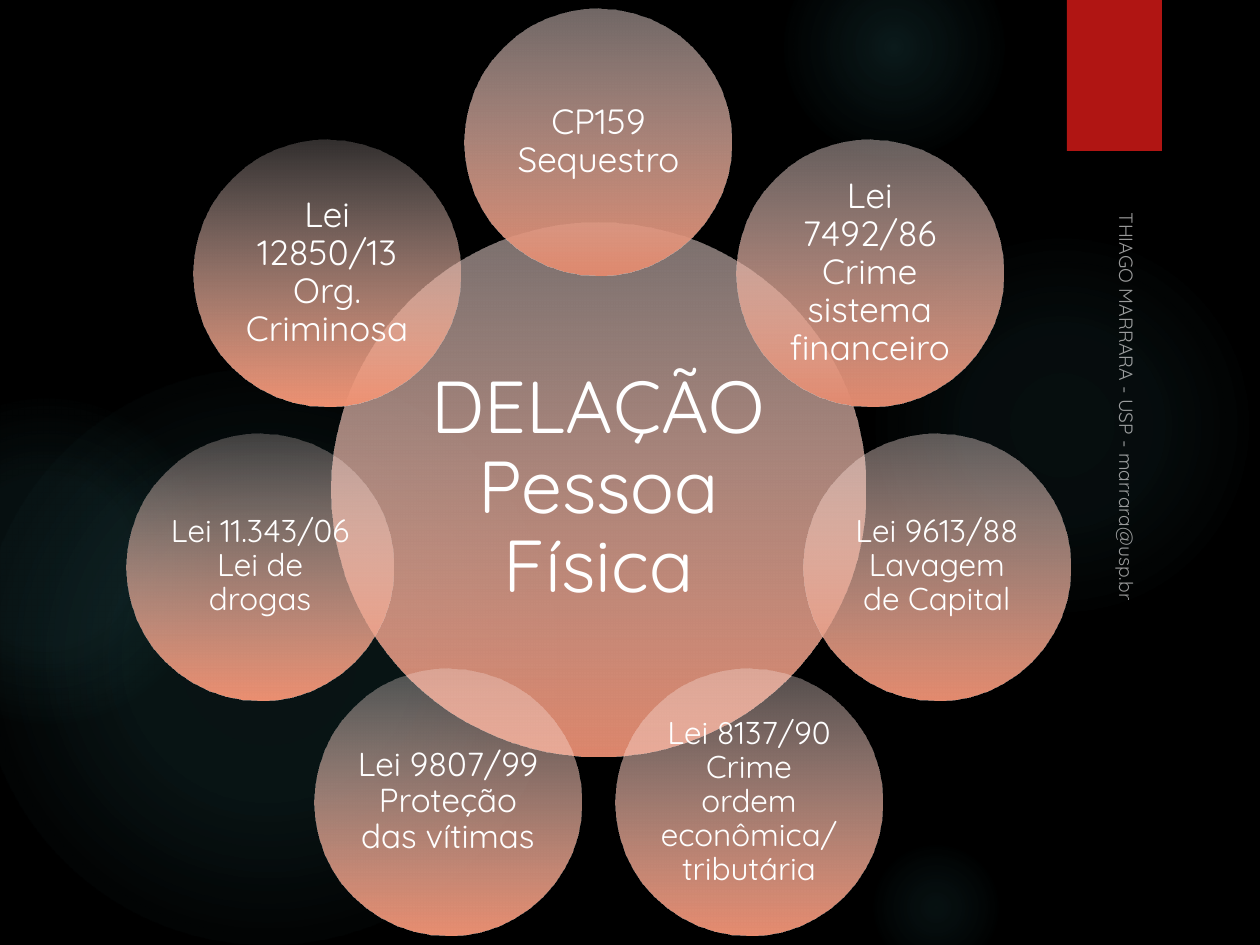
from math import cos, radians, sin

from pptx import Presentation
from pptx.dml.color import RGBColor
from pptx.enum.shapes import MSO_SHAPE as SHAPE
from pptx.enum.text import MSO_ANCHOR as ANCHOR, PP_ALIGN as ALIGN
from pptx.oxml import parse_xml
from pptx.oxml.ns import nsdecls, qn
from pptx.util import Pt

PX = 914400 / 126
FONT = "Quicksand"
BLACK = RGBColor(0x00, 0x00, 0x00)
WHITE = RGBColor(0xFF, 0xFF, 0xFF)
RED = RGBColor(0xB0, 0x15, 0x13)
TEAL = RGBColor(0x50, 0xB9, 0xC1)

GLOWS = [
    (868, 231, 388, [(0, 7), (36, 6), (69, 0)]),
    (784, -63, 220, [(0, 14), (36, 7), (73, 0)]),
    (868, 840, 136, [(0, 9), (36, 5), (66, 0)]),
    (-21, 368, 577, [(0, 11), (36, 10), (75, 0)]),
    (-116, 399, 325, [(0, 8), (36, 8), (72, 0)]),
]

HUB = ("DELAÇÃO Pessoa Física", 42, RGBColor(0xF5, 0xDF, 0xDB), 50, RGBColor(0xDE, 0x88, 0x6E))
PETALS = [
    ("CP159 Sequestro", 20, RGBColor(0xF6, 0xE0, 0xDC), 46, RGBColor(0xE0, 0x8A, 0x6F)),
    ("Lei 7492/86 Crime sistema financeiro", 20,
     RGBColor(0xF7, 0xE1, 0xDD), 41, RGBColor(0xE3, 0x8B, 0x70)),
    ("Lei 9613/88 Lavagem de Capital", 18,
     RGBColor(0xF8, 0xE3, 0xDE), 37, RGBColor(0xE5, 0x8C, 0x70)),
    ("Lei 8137/90 Crime ordem econômica/tributária", 18,
     RGBColor(0xF9, 0xE4, 0xE0), 33, RGBColor(0xE8, 0x8D, 0x71)),
    ("Lei 9807/99 Proteção das vítimas", 19,
     RGBColor(0xF9, 0xE5, 0xE1), 29, RGBColor(0xEA, 0x8F, 0x72)),
    ("Lei 11.343/06 Lei de drogas", 18,
     RGBColor(0xFA, 0xE6, 0xE2), 24, RGBColor(0xED, 0x90, 0x72)),
    ("Lei 12850/13 Org. Criminosa", 20,
     RGBColor(0xFB, 0xE8, 0xE4), 20, RGBColor(0xEF, 0x92, 0x73)),
]


def px(n):
    return round(n * PX)


def add_shape(s, kind, x, y, w, h):
    sp = s.shapes.add_shape(kind, px(x), px(y), px(w), px(h))
    sp.shadow.inherit = False
    sp.fill.background()
    sp.line.fill.background()
    return sp


def set_gradient(sp, stops, direction):
    gs = "".join(
        f'<a:gs pos="{pos * 1000}"><a:srgbClr val="{color}">'
        f'<a:alpha val="{alpha * 1000}"/></a:srgbClr></a:gs>'
        for pos, color, alpha in stops)
    grad = parse_xml(f'<a:gradFill {nsdecls("a")} rotWithShape="1">'
                     f'<a:gsLst>{gs}</a:gsLst>{direction}</a:gradFill>')
    spPr = sp._element.spPr
    spPr.replace(spPr.find(qn("a:noFill")), grad)


def add_glow(s, x, y, d, stops):
    sp = add_shape(s, SHAPE.OVAL, x, y, d, d)
    set_gradient(sp, [(pos, TEAL, alpha) for pos, alpha in stops],
                 '<a:path path="circle"><a:fillToRect l="50000" t="50000" '
                 'r="50000" b="50000"/></a:path>')


def add_tab(s, x, y, w, h):
    sp = add_shape(s, SHAPE.RECTANGLE, x, y, w, h)
    sp.fill.solid()
    sp.fill.fore_color.rgb = RED
    sp._element.spPr.find(qn("a:effectLst")).append(parse_xml(
        f'<a:outerShdw {nsdecls("a")} blurRad="38100" dist="25400" dir="5400000" '
        f'rotWithShape="0"><a:srgbClr val="{BLACK}"><a:alpha val="45000"/>'
        '</a:srgbClr></a:outerShdw>'))


def add_circle(s, cx, cy, d, inset, label):
    text, size, top, alpha, bottom = label
    sp = add_shape(s, SHAPE.OVAL, cx - d / 2, cy - d / 2, d, d)
    set_gradient(sp, [(0, top, alpha), (100, bottom, 100)],
                 '<a:lin ang="5400000" scaled="0"/>')
    tf = sp.text_frame
    tf.word_wrap = True
    tf.vertical_anchor = ANCHOR.MIDDLE
    tf.margin_left = tf.margin_right = tf.margin_top = tf.margin_bottom = px(inset)
    p = tf.paragraphs[0]
    p.text = text
    p.alignment = ALIGN.CENTER
    p.line_spacing = 0.9
    p.font.name, p.font.size = FONT, Pt(size)
    p.font.color.rgb = WHITE


def add_flower(s, x, y, w, h):
    petal = 267
    hub = 2 * petal
    orbit = 347
    cx, cy = x + w / 2, y + petal / 2 + orbit
    add_circle(s, cx, cy, hub, 8, HUB)
    for i, label in enumerate(PETALS):
        angle = radians(360 * i / len(PETALS))
        add_circle(s, cx + orbit * sin(angle), cy - orbit * cos(angle), petal, 4, label)


def add_credit(s, x, y, w, h):
    sp = s.shapes.add_textbox(px(x), px(y), px(w), px(h))
    sp.rotation = 90
    tf = sp.text_frame
    tf.word_wrap = True
    tf.vertical_anchor = ANCHOR.BOTTOM
    p = tf.paragraphs[0]
    p.text = "THIAGO MARRARA - USP - marrara@usp.br"
    p.font.name, p.font.size = FONT, Pt(11)
    p.font.color.rgb = WHITE
    color = next(p._p.iter(qn("a:srgbClr")))
    color.append(parse_xml(f'<a:alpha {nsdecls("a")} val="60000"/>'))


def main():
    prs = Presentation()
    prs.slide_width, prs.slide_height = px(1260), px(945)
    s = prs.slides.add_slide(prs.slide_layouts[6])
    s.background.fill.solid()
    s.background.fill.fore_color.rgb = BLACK
    for glow in GLOWS:
        add_glow(s, *glow)
    add_tab(s, 1067, 0, 95, 151)
    add_flower(s, 126, 9, 945, 928)
    add_credit(s, 859, 450, 532, 32)
    prs.save("out.pptx")


if __name__ == "__main__":
    main()
